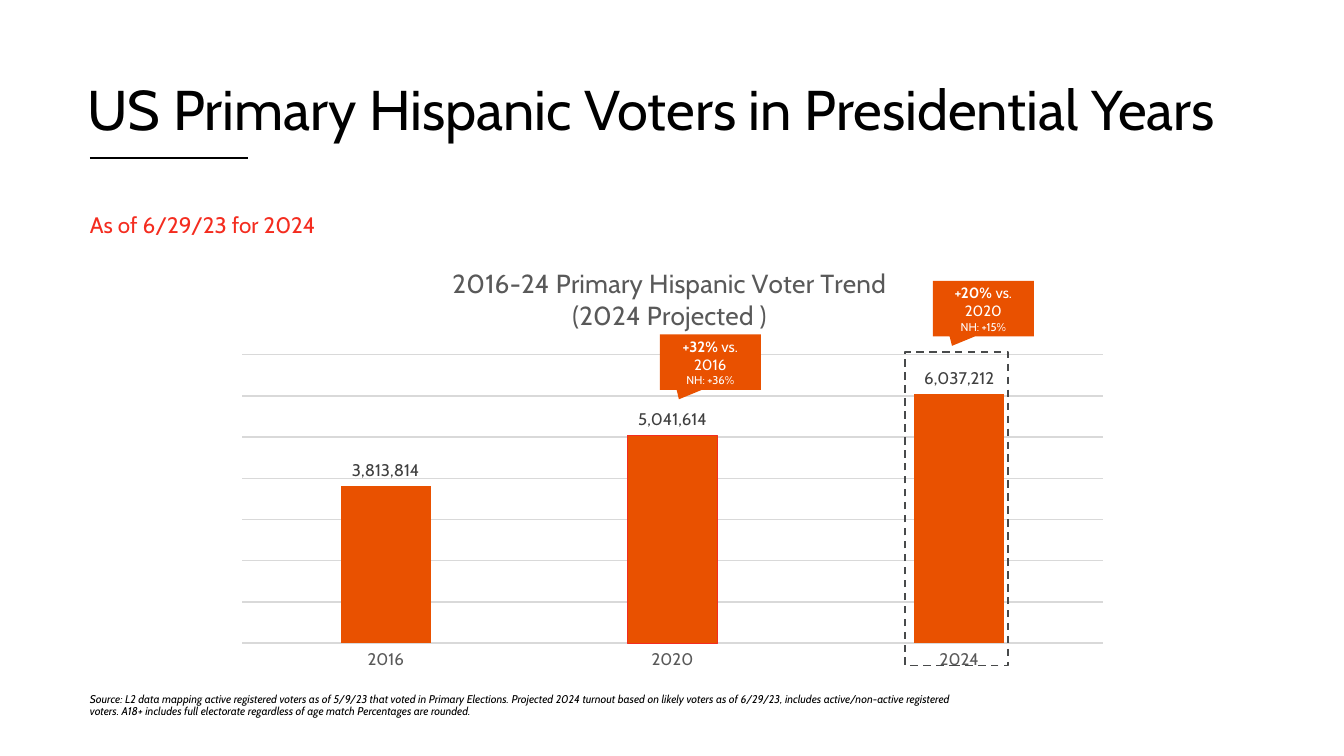
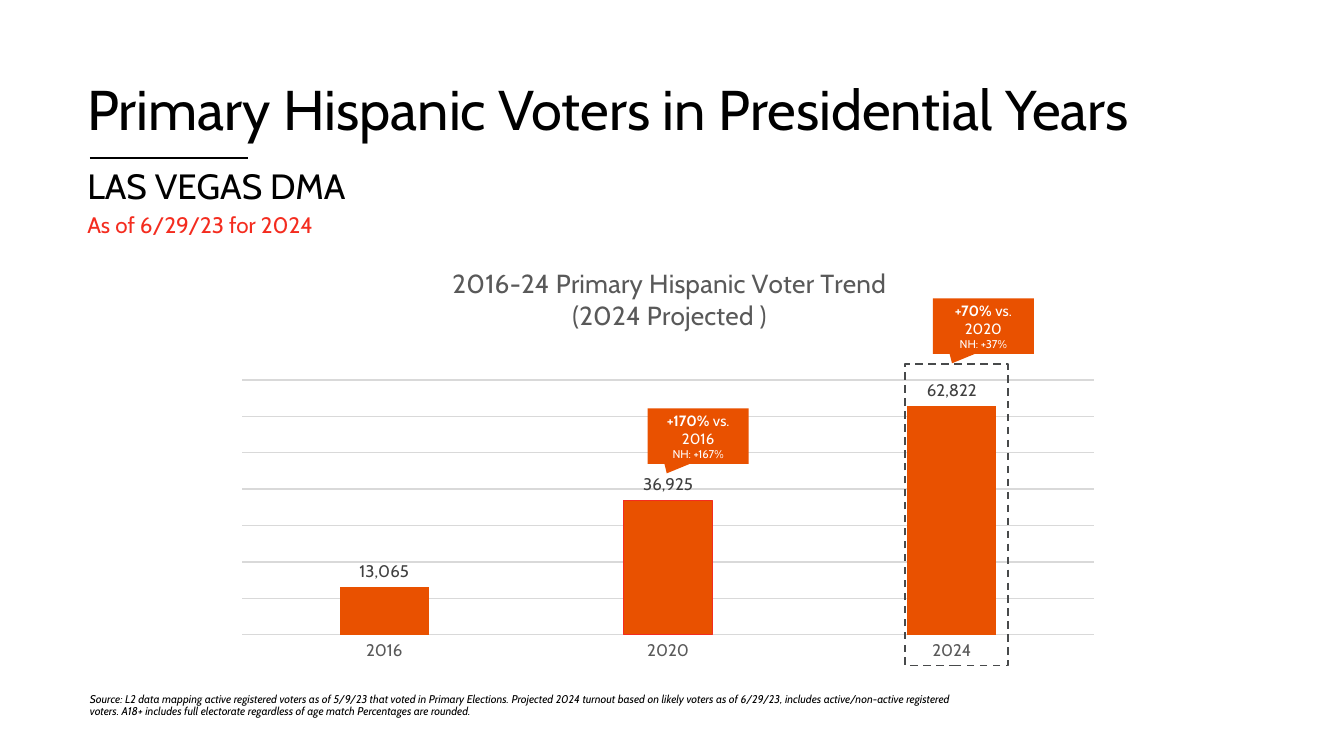
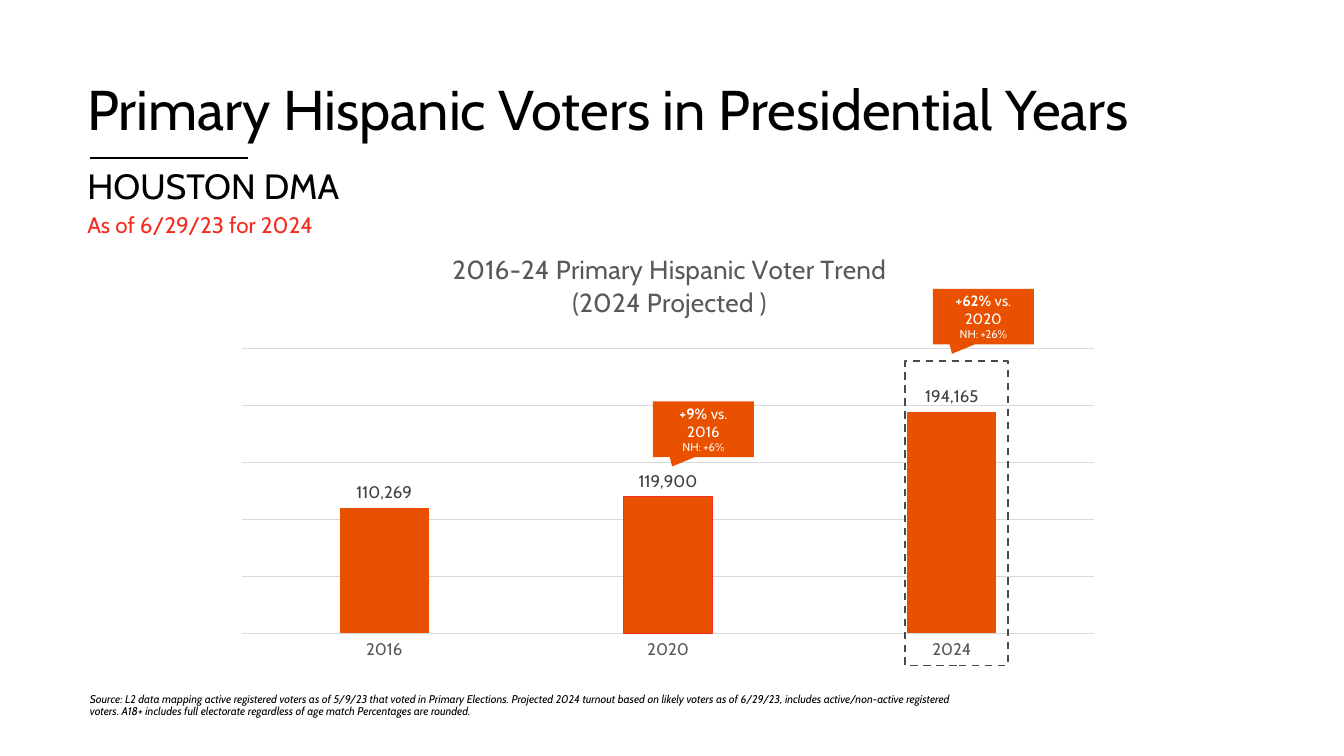
"""Build three slides on the trend of Hispanic primary voters."""
from lxml.etree import SubElement
from pptx import Presentation
from pptx.chart.data import CategoryChartData
from pptx.dml.color import RGBColor
from pptx.enum.chart import XL_CHART_TYPE, XL_LABEL_POSITION, XL_TICK_LABEL_POSITION, XL_TICK_MARK
from pptx.enum.dml import MSO_LINE
from pptx.enum.shapes import MSO_CONNECTOR, MSO_SHAPE
from pptx.enum.text import MSO_ANCHOR, PP_ALIGN
from pptx.oxml.ns import qn
from pptx.util import Cm, Pt

BLACK = RGBColor(0x00, 0x00, 0x00)
WHITE = RGBColor(0xFF, 0xFF, 0xFF)
RED = RGBColor(0xF4, 0x2C, 0x1F)
ORANGE = RGBColor(0xE9, 0x51, 0x00)
SLATE = RGBColor(0x48, 0x4A, 0x4B)
DARK = RGBColor(0x40, 0x40, 0x40)
GRAY = RGBColor(0x59, 0x59, 0x59)
PALE = RGBColor(0xD9, 0xD9, 0xD9)
FONT = "Cabin"

SOURCE = (
    "Source: L2 data mapping active registered voters as of 5/9/23 that voted in "
    "Primary Elections. Projected 2024 turnout based on likely voters as of 6/29/23, "
    "includes active/non-active registered voters. A18+ includes full electorate "
    "regardless of age match Percentages are rounded."
)
TITLE = "Primary Hispanic Voters in Presidential Years"
YEARS = ["2016", "2020", "2024"]

PAGES = [
    dict(title="US " + TITLE, city=None, left=1.45, votes=(3813814, 5041614, 6037212),
         step=1000000, peak=7000000, top=4.78, plot=(0.02, 0.24, 0.96, 0.68), dash=6.65,
         tags=[(12.47, 6.32, "+32%", "2016", "+36%"), (17.63, 5.31, "+20%", "2020", "+15%")]),
    dict(title=TITLE, city="LAS VEGAS DMA", left=1.4, votes=(13065, 36925, 62822),
         step=10000, peak=70000, top=4.78, plot=(0.02, 0.3, 0.95, 0.6), dash=6.88,
         tags=[(12.24, 7.72, "+170%", "2016", "+167%"), (17.63, 5.64, "+70%", "2020", "+37%")]),
    dict(title=TITLE, city="HOUSTON DMA", left=1.4, votes=(110269, 119900, 194165),
         step=50000, peak=250000, top=4.52, plot=(0.02, 0.25, 0.95, 0.65), dash=6.83,
         tags=[(12.34, 7.59, "+9%", "2016", "+6%"), (17.63, 5.46, "+62%", "2020", "+26%")]),
]


def write(para, text, size=8, color=BLACK, bold=False, slant=False):
    """Add one styled run to a paragraph."""
    run = para.add_run()
    run.text = text
    font = run.font
    font.name, font.size, font.bold, font.italic = FONT, Pt(size), bold, slant
    font.color.rgb = color


def place(node, index, **spots):
    """Give a chart part a fixed layout."""
    for old in node.findall(qn("c:layout")):
        node.remove(old)
    box = SubElement(node, qn("c:layout"))
    node.insert(index, box)
    form = SubElement(box, qn("c:manualLayout"))
    if "w" in spots:
        SubElement(form, qn("c:layoutTarget")).set("val", "inner")
    for key in "xy":
        SubElement(form, qn(f"c:{key}Mode")).set("val", "edge")
    for key, spot in spots.items():
        SubElement(form, qn(f"c:{key}")).set("val", str(spot))


deck = Presentation()
deck.slide_width, deck.slide_height = Cm(25.4), Cm(14.29)

for page in PAGES:
    slide = deck.slides.add_slide(deck.slide_layouts[6])
    shapes = slide.shapes

    rule = shapes.add_connector(MSO_CONNECTOR.STRAIGHT, Cm(1.7), Cm(2.99), Cm(4.69), Cm(2.99))
    rule.line.color.rgb = BLACK
    rule.line.width = Pt(0.75)
    SubElement(rule.element.spPr, qn("a:effectLst"))

    texts = [
        ("As of 6/29/23 for 2024", page["left"], 3.86, 9.68, 0.76, None, dict(size=12, color=RED)),
        (page["title"], 1.4, 1.53, 24.71, 2.18, Pt(29), dict(size=30)),
        (SOURCE, 1.45, 12.99, 17.32, 0.51, 0.9, dict(size=6, slant=True)),
    ]
    if page["city"]:
        texts.append((page["city"], 1.4, 2.99, 7, 1.07, None, dict(size=18.8)))
    for text, left, top, wide, high, space, style in texts:
        frame = shapes.add_textbox(Cm(left), Cm(top), Cm(wide), Cm(high)).text_frame
        frame.word_wrap = True
        para = frame.paragraphs[0]
        para.line_spacing = space
        write(para, text, **style)

    data = CategoryChartData(number_format="#,##0")
    data.categories = YEARS
    data.add_series("Series 1", page["votes"])
    chart = shapes.add_chart(
        XL_CHART_TYPE.COLUMN_CLUSTERED, Cm(4.24), Cm(page["top"]),
        Cm(16.94), Cm(12.8 - page["top"]), data).chart
    chart.has_legend = False
    chart.font.name, chart.font.size = FONT, Pt(10)
    chart.font.color.rgb = BLACK

    head = chart.chart_title.text_frame
    write(head.paragraphs[0], "2016-24 Primary Hispanic Voter Trend", size=14, color=GRAY)
    write(head.add_paragraph(), "(2024 Projected )", size=14, color=GRAY)
    place(chart.chart_title._element, 1, x=0.25, y=0.02)
    area = chart.plots[0]._element.getparent()
    place(area, 0, **dict(zip("xywh", page["plot"])))

    axis = chart.category_axis
    axis.major_tick_mark = axis.minor_tick_mark = XL_TICK_MARK.NONE
    axis.tick_label_position = XL_TICK_LABEL_POSITION.NEXT_TO_AXIS
    axis.format.line.color.rgb = PALE
    axis.format.line.width = Pt(0.75)
    font = axis.tick_labels.font
    font.name, font.size = FONT, Pt(9)
    font.color.rgb = GRAY

    scale = chart.value_axis
    scale.visible = False
    scale.minimum_scale, scale.maximum_scale = 0, page["peak"]
    scale.major_unit = page["step"]
    scale.has_major_gridlines = True
    grid = scale.major_gridlines.format.line
    grid.color.rgb = PALE
    grid.width = Pt(0.75)

    plot = chart.plots[0]
    plot.gap_width, plot.overlap = 219, -27
    plot.vary_by_categories = False
    bars = plot.series[0]
    bars.format.fill.solid()
    bars.format.fill.fore_color.rgb = ORANGE
    mid = bars.points[1].format
    mid.fill.solid()
    mid.fill.fore_color.rgb = ORANGE
    mid.line.color.rgb = RED
    mid.line.width = Pt(0.5)
    plot.has_data_labels = True
    labels = plot.data_labels
    labels.show_value = True
    labels.position = XL_LABEL_POSITION.OUTSIDE_END
    labels.number_format, labels.number_format_is_linked = "#,##0", False
    labels.font.name, labels.font.size = FONT, Pt(9)
    labels.font.color.rgb = DARK

    frame = shapes.add_shape(
        MSO_SHAPE.RECTANGLE, Cm(17.11), Cm(page["dash"]), Cm(1.94), Cm(12.58 - page["dash"]))
    frame.shadow.inherit = False
    frame.fill.background()
    frame.line.color.rgb = SLATE
    frame.line.width = Pt(1)
    frame.line.dash_style = MSO_LINE.DASH

    for left, top, gain, year, other in page["tags"]:
        tag = shapes.add_shape(
            MSO_SHAPE.RECTANGULAR_CALLOUT, Cm(left), Cm(top), Cm(1.91), Cm(1.05))
        tag.adjustments[0], tag.adjustments[1] = -0.31, 0.67
        tag.shadow.inherit = False
        tag.fill.solid()
        tag.fill.fore_color.rgb = ORANGE
        tag.line.fill.background()
        body = tag.text_frame
        body.word_wrap = True
        body.vertical_anchor = MSO_ANCHOR.MIDDLE
        first, last = body.paragraphs[0], body.add_paragraph()
        first.alignment = last.alignment = PP_ALIGN.CENTER
        write(first, gain + " ", color=WHITE, bold=True)
        write(first, "vs. " + year, color=WHITE)
        write(last, "NH: " + other, size=6, color=WHITE)

deck.save("out.pptx")
